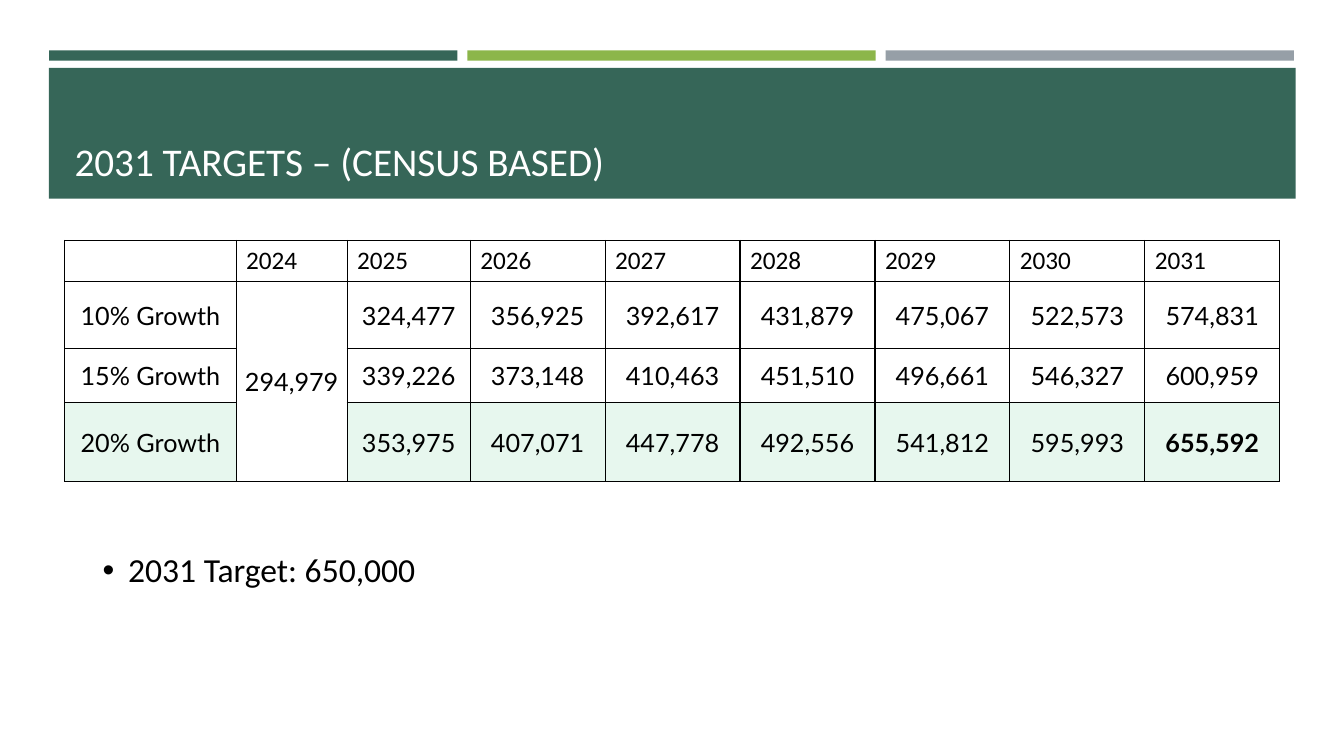
import pptx
import pptx.util
import pptx.dml.color
import pptx.enum.shapes
import pptx.enum.text
import lxml.etree
from pptx.util import Cm, Pt

# Content
TITLE = "2031 TARGETS – (CENSUS BASED)"
YEARS = ["2024", "2025", "2026", "2027", "2028", "2029", "2030", "2031"]
BASE_VALUE = "294,979"
GROWTH = [
    ("10% Growth", ["324,477", "356,925", "392,617", "431,879", "475,067", "522,573", "574,831"]),
    ("15% Growth", ["339,226", "373,148", "410,463", "451,510", "496,661", "546,327", "600,959"]),
    ("20% Growth", ["353,975", "407,071", "447,778", "492,556", "541,812", "595,993", "655,592"]),
]
TARGET = "2031 Target: 650,000"

COLORS = {"green": "366658", "lime": "8CB64A", "gray": "969FA7", "mint": "E7F7EE",
          "black": "000000", "white": "FFFFFF"}

# Layout in centimetres
STRIPES = ["green", "lime", "gray"]
STRIPE_LEFT, STRIPE_WIDTH, STRIPE_STEP = 1.24, 10.29, 10.54
COLUMN_WIDTHS = [4.32, 2.8, 3.1] + [3.4] * 6
ROW_HEIGHTS = [1.04, 1.68, 1.37, 1.98]
DRAWING = "http://schemas.openxmlformats.org/drawingml/2006/main"


def rgb(name):
    return pptx.dml.color.RGBColor.from_string(COLORS[name])


def style(paragraph, size, color="black", font="Calibri"):
    paragraph.font.size = Pt(size)
    paragraph.font.name = font
    paragraph.font.color.rgb = rgb(color)


def add_bar(slide, left, top, width, height, color):
    bar = slide.shapes.add_shape(pptx.enum.shapes.MSO_SHAPE.RECTANGLE,
                                 Cm(left), Cm(top), Cm(width), Cm(height))
    bar.shadow.inherit = False
    bar.fill.solid()
    bar.fill.fore_color.rgb = rgb(color)
    bar.line.fill.background()


def add_text(slide, left, top, width, height, text, size, color):
    box = slide.shapes.add_textbox(Cm(left), Cm(top), Cm(width), Cm(height))
    box.text_frame.word_wrap = True
    paragraph = box.text_frame.paragraphs[0]
    paragraph.text = text
    style(paragraph, size, color)
    return box.text_frame


def add_borders(cell):
    properties = cell._tc.get_or_add_tcPr()
    for position, side in enumerate(["lnL", "lnR", "lnT", "lnB"]):
        line = lxml.etree.Element(f"{{{DRAWING}}}{side}", w=str(Pt(1)))
        fill = lxml.etree.SubElement(line, f"{{{DRAWING}}}solidFill")
        lxml.etree.SubElement(fill, f"{{{DRAWING}}}srgbClr", val=COLORS["black"])
        properties.insert(position, line)


def add_growth_table(slide):
    rows = [["", *YEARS]]
    for index, (label, values) in enumerate(GROWTH):
        rows.append([label, "" if index else BASE_VALUE, *values])
    frame = slide.shapes.add_table(len(rows), len(rows[0]), Cm(1.63), Cm(6.06),
                                   Cm(sum(COLUMN_WIDTHS)), Cm(sum(ROW_HEIGHTS)))
    table = frame.table
    table.first_row = table.horz_banding = False
    for column, width in zip(table.columns, COLUMN_WIDTHS):
        column.width = Cm(width)
    for row, height in zip(table.rows, ROW_HEIGHTS):
        row.height = Cm(height)

    last_row, last_column = len(rows) - 1, len(rows[0]) - 1
    for r, texts in enumerate(rows):
        for c, text in enumerate(texts):
            cell = table.cell(r, c)
            cell.text = text
            paragraph = cell.text_frame.paragraphs[0]
            style(paragraph, 18, font="Lato" if r else "Calibri")
            if r:
                paragraph.alignment = pptx.enum.text.PP_ALIGN.CENTER
                cell.vertical_anchor = pptx.enum.text.MSO_ANCHOR.MIDDLE
                cell.margin_left = cell.margin_right = cell.margin_top = Cm(0.03)
                cell.margin_bottom = 0
            if r == last_row and c != 1:
                cell.fill.solid()
                cell.fill.fore_color.rgb = rgb("mint")
            else:
                cell.fill.background()
            add_borders(cell)
    table.cell(last_row, last_column).text_frame.paragraphs[0].runs[0].font.bold = True
    table.cell(1, 1).merge(table.cell(last_row, 1))


def main():
    presentation = pptx.Presentation()
    presentation.slide_width, presentation.slide_height = Cm(33.87), Cm(19.05)
    slide = presentation.slides.add_slide(presentation.slide_layouts[6])

    # Stripes and title band
    for index, color in enumerate(STRIPES):
        add_bar(slide, STRIPE_LEFT + index * STRIPE_STEP, 1.27, STRIPE_WIDTH, 0.26, color)
    add_bar(slide, 1.23, 1.71, 31.42, 3.3, "green")
    title = add_text(slide, 1.63, 1.96, 30.63, 2.82, TITLE, 28, "white")
    title.vertical_anchor = pptx.enum.text.MSO_ANCHOR.BOTTOM

    add_growth_table(slide)

    # Target bullet
    target = add_text(slide, 2.34, 13.82, 29.21, 3.35, TARGET, 24, "black").paragraphs[0]
    target.line_spacing = 0.9
    target.space_before = Pt(10)
    properties = target._p.get_or_add_pPr()
    properties.set("marL", str(Cm(0.64)))
    properties.set("indent", str(-Cm(0.64)))
    bullet_font = lxml.etree.Element(f"{{{DRAWING}}}buFont", typeface="Arial")
    bullet = lxml.etree.Element(f"{{{DRAWING}}}buChar", char="•")
    properties.find(f"{{{DRAWING}}}spcBef").addnext(bullet_font)
    bullet_font.addnext(bullet)

    presentation.save("out.pptx")


if __name__ == "__main__":
    main()
